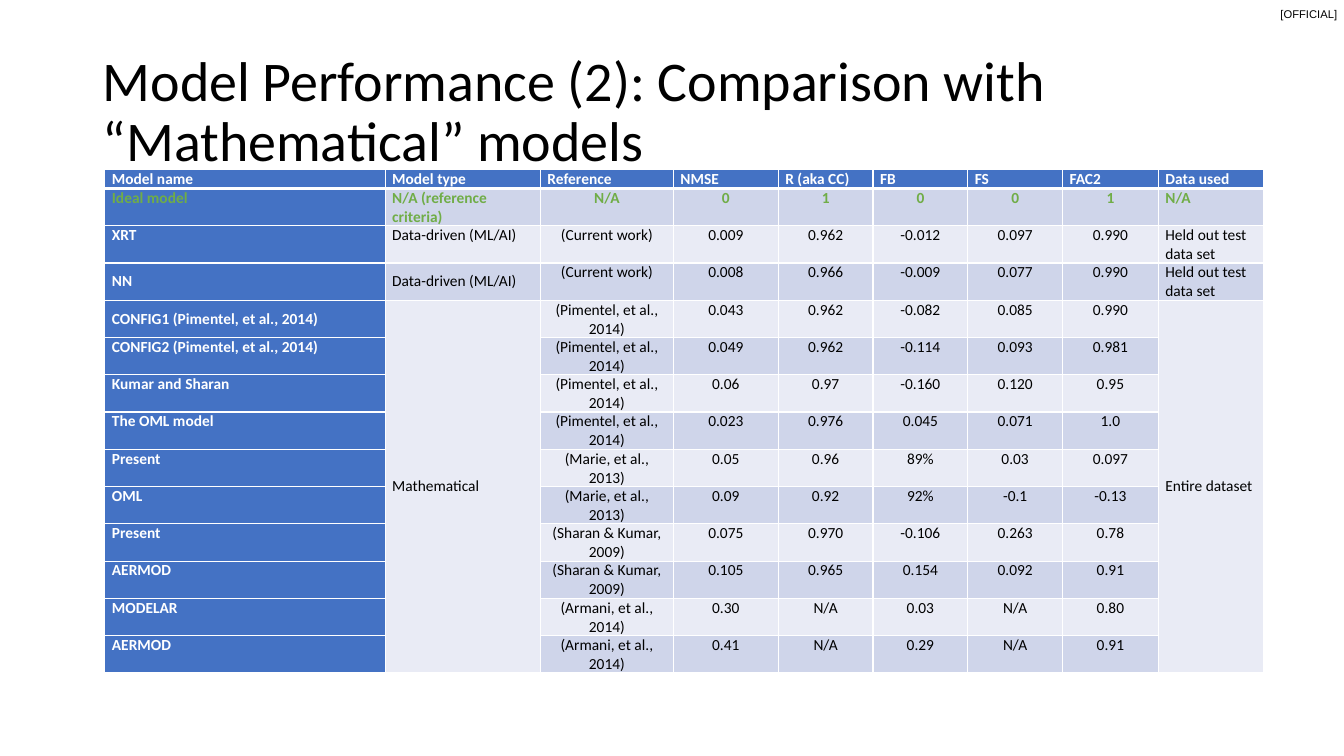
from dataclasses import dataclass

from lxml import etree
from pptx import Presentation
from pptx.dml.color import RGBColor
from pptx.enum.text import MSO_ANCHOR, MSO_AUTO_SIZE, PP_ALIGN
from pptx.oxml.ns import qn
from pptx.slide import Slide
from pptx.table import Table, _Cell
from pptx.text.text import TextFrame
from pptx.util import Inches, Pt

LEFT, CENTER = PP_ALIGN.LEFT, PP_ALIGN.CENTER
TOP, MIDDLE = MSO_ANCHOR.TOP, MSO_ANCHOR.MIDDLE
NO_FIT = MSO_AUTO_SIZE.NONE

BLACK = RGBColor(0x00, 0x00, 0x00)
WHITE = RGBColor(0xFF, 0xFF, 0xFF)
BLUE = RGBColor(0x44, 0x72, 0xC4)
GREEN = RGBColor(0x70, 0xAD, 0x47)
BAND_DARK = RGBColor(0xCF, 0xD5, 0xEA)
BAND_LIGHT = RGBColor(0xE9, 0xEB, 0xF5)

HEADERS = ["Model name", "Model type", "Reference", "NMSE", "R (aka CC)",
           "FB", "FS", "FAC2", "Data used"]
COL_WIDTHS = [2.78, 1.54, 1.32, 1.04, 0.94, 0.94, 0.94, 0.95, 1.04]
HEADER_HEIGHT, ROW_HEIGHT = 0.19, 0.37
TYPE_COL, DATA_COL = 1, 8
MERGE_START = 4
MIDDLE_CELLS = {(3, 0), (3, 1), (4, 0), (4, 1), (4, 8)}


@dataclass
class Model:
    name: str
    reference: str
    scores: list[str]
    kind: str = ""
    data: str = ""

    def cells(self) -> list[str]:
        return [self.name, self.kind, self.reference, *self.scores, self.data]


DATA_DRIVEN, HELD_OUT = "Data-driven (ML/AI)", "Held out test data set"
CURRENT = "(Current work)"
PIMENTEL = "(Pimentel, et al., 2014)"
MARIE = "(Marie, et al., 2013)"
SHARAN = "(Sharan & Kumar, 2009)"
ARMANI = "(Armani, et al., 2014)"

MODELS = [
    Model("Ideal model", "N/A", ["0", "1", "0", "0", "1"], "N/A (reference criteria)", "N/A"),
    Model("XRT", CURRENT, ["0.009", "0.962", "-0.012", "0.097", "0.990"], DATA_DRIVEN, HELD_OUT),
    Model("NN", CURRENT, ["0.008", "0.966", "-0.009", "0.077", "0.990"], DATA_DRIVEN, HELD_OUT),
    Model("CONFIG1 (Pimentel, et al., 2014)", PIMENTEL,
          ["0.043", "0.962", "-0.082", "0.085", "0.990"], "Mathematical", "Entire dataset"),
    Model("CONFIG2 (Pimentel, et al., 2014)", PIMENTEL,
          ["0.049", "0.962", "-0.114", "0.093", "0.981"]),
    Model("Kumar and Sharan", PIMENTEL, ["0.06", "0.97", "-0.160", "0.120", "0.95"]),
    Model("The OML model", PIMENTEL, ["0.023", "0.976", "0.045", "0.071", "1.0"]),
    Model("Present", MARIE, ["0.05", "0.96", "89%", "0.03", "0.097"]),
    Model("OML", MARIE, ["0.09", "0.92", "92%", "-0.1", "-0.13"]),
    Model("Present", SHARAN, ["0.075", "0.970", "-0.106", "0.263", "0.78"]),
    Model("AERMOD", SHARAN, ["0.105", "0.965", "0.154", "0.092", "0.91"]),
    Model("MODELAR", ARMANI, ["0.30", "N/A", "0.03", "N/A", "0.80"]),
    Model("AERMOD", ARMANI, ["0.41", "N/A", "0.29", "N/A", "0.91"]),
]


def add_text(tf: TextFrame, text: str, size: float, color: RGBColor, font: str = "Calibri",
             bold: bool = False, align: PP_ALIGN = LEFT) -> None:
    p = tf.paragraphs[0]
    p.alignment = align
    r = p.add_run()
    r.text = text
    r.font.name = font
    r.font.size = Pt(size)
    r.font.bold = bold
    r.font.color.rgb = color


def set_borders(cell: _Cell, top: float, bottom: float) -> None:
    tc_pr = cell._tc.get_or_add_tcPr()
    for tag, width in (("a:lnL", 1), ("a:lnR", 1), ("a:lnT", top), ("a:lnB", bottom)):
        ln = etree.SubElement(tc_pr, qn(tag), w=str(Pt(width)))
        fill = etree.SubElement(ln, qn("a:solidFill"))
        etree.SubElement(fill, qn("a:srgbClr"), val=str(WHITE))


def fill_cell(table: Table, row: int, col: int, text: str) -> None:
    cell = table.cell(row, col)
    set_borders(cell, 3 if row == 1 else 1, 3 if row == 0 else 1)
    blue = row == 0 or col == 0
    band = BAND_DARK if row % 2 else BAND_LIGHT
    if row >= MERGE_START and col in (TYPE_COL, DATA_COL):
        band = BAND_LIGHT
    cell.fill.solid()
    cell.fill.fore_color.rgb = BLUE if blue else band
    cell.margin_left = cell.margin_right = Inches(0.07)
    cell.margin_top = cell.margin_bottom = 0
    cell.vertical_anchor = MIDDLE if (row, col) in MIDDLE_CELLS else TOP
    if text:
        color = GREEN if row == 1 else WHITE if blue else BLACK
        centred = row > 0 and TYPE_COL < col < DATA_COL
        add_text(cell.text_frame, text, 11, color, bold=blue or row == 1,
                 align=CENTER if centred else LEFT)


def add_model_table(s: Slide) -> None:
    rows = [HEADERS] + [model.cells() for model in MODELS]
    height = HEADER_HEIGHT + ROW_HEIGHT * len(MODELS)
    frame = s.shapes.add_table(len(rows), len(HEADERS), Inches(1.04), Inches(1.68),
                               Inches(sum(COL_WIDTHS)), Inches(height))
    table = frame.table
    table.horz_banding = False
    for column, width in zip(table.columns, COL_WIDTHS):
        column.width = Inches(width)
    for row, texts in enumerate(rows):
        table.rows[row].height = Inches(ROW_HEIGHT if row else HEADER_HEIGHT)
        for col, text in enumerate(texts):
            fill_cell(table, row, col, text)
    for col in (TYPE_COL, DATA_COL):
        table.cell(MERGE_START, col).merge(table.cell(len(rows) - 1, col))


def add_title(s: Slide) -> None:
    title = s.shapes.title
    title.left, title.top = Inches(0.92), Inches(0.4)
    title.width, title.height = Inches(11.5), Inches(1.45)
    tf = title.text_frame
    tf.word_wrap = True
    tf.auto_size = NO_FIT
    tf.vertical_anchor = MIDDLE
    tf.paragraphs[0].line_spacing = 0.9
    add_text(tf, "Model Performance (2): Comparison with “Mathematical” models", 40, BLACK)


def add_marking(s: Slide) -> None:
    tf = s.shapes.add_textbox(Inches(12.7), Inches(0.07), Inches(0.6), Inches(0.13)).text_frame
    tf.margin_left = tf.margin_right = tf.margin_top = tf.margin_bottom = 0
    tf.word_wrap = True
    add_text(tf, "[OFFICIAL]", 8, BLACK, font="Arial")


def main() -> None:
    prs = Presentation()
    prs.slide_width, prs.slide_height = Inches(13.33), Inches(7.5)
    s = prs.slides.add_slide(prs.slide_layouts[5])
    add_marking(s)
    add_title(s)
    add_model_table(s)
    prs.save("out.pptx")


if __name__ == "__main__":
    main()
